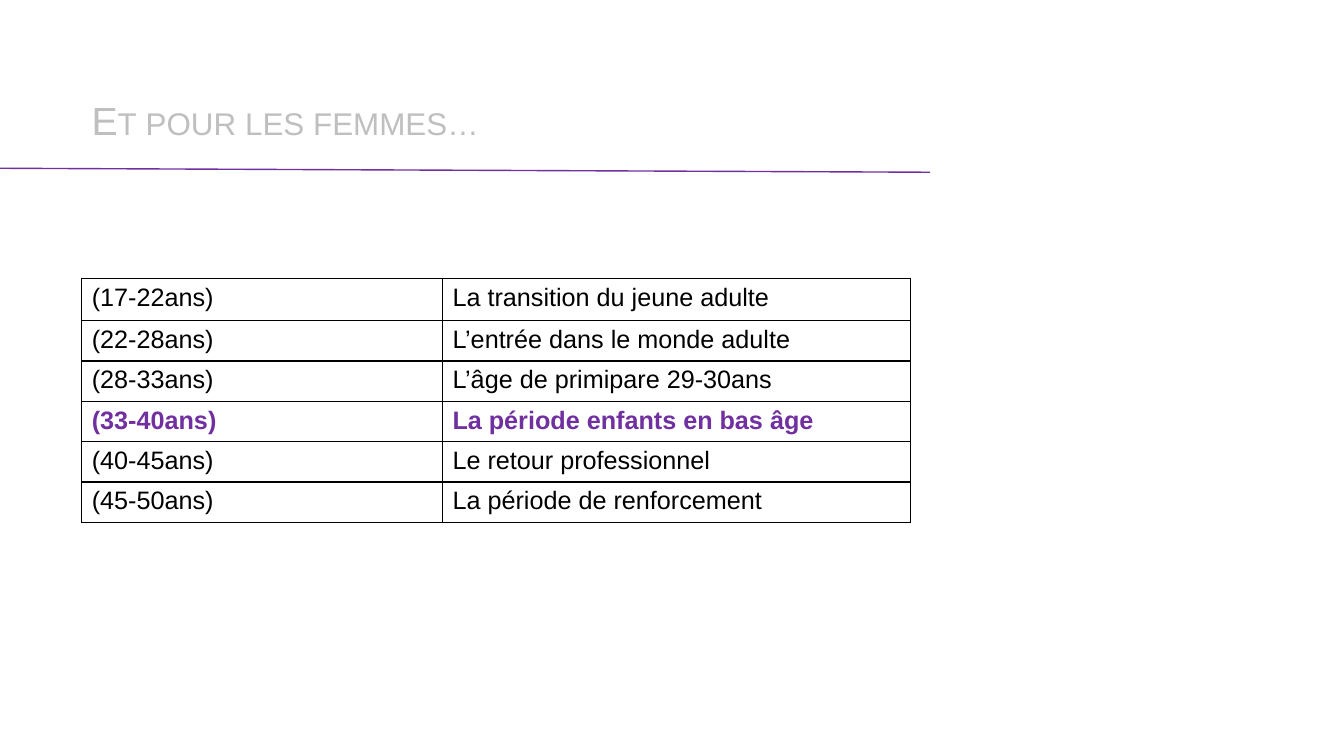
import pptx
import pptx.dml.color
import pptx.enum.shapes
import pptx.enum.text
import pptx.oxml.ns
import pptx.util
from lxml import etree
from pptx.util import Cm

TITLE = "Et pour les femmes…"
LIFE_PERIODS = [
    ("(17-22ans)", "La transition du jeune adulte"),
    ("(22-28ans)", "L’entrée dans le monde adulte"),
    ("(28-33ans)", "L’âge de primipare 29-30ans"),
    ("(33-40ans)", "La période enfants en bas âge"),
    ("(40-45ans)", "Le retour professionnel"),
    ("(45-50ans)", "La période de renforcement"),
]
HIGHLIGHTED_AGES = "(33-40ans)"

COLORS = {"title": "BFBFBF", "accent": "7030A0", "text": "000000", "border": "000000"}
FONT = "Arial"
LEFT = 2.06
COLUMN_WIDTHS = [9.09, 11.79]
FIRST_ROW_HEIGHT, ROW_HEIGHT = 1.07, 1.01


def write(frame, text, size=18, color="text", bold=False, small_caps=False):
    run = frame.paragraphs[0].add_run()
    run.text = text
    run.font.name = FONT
    run.font.size = pptx.util.Pt(size)
    run.font.bold = bold
    run.font.color.rgb = pptx.dml.color.RGBColor.from_string(COLORS[color])
    if small_caps:
        run.font._element.set("cap", "small")


def add_borders(cell):
    """Draw a 1 pt line on all four sides of a table cell."""
    properties = cell._tc.get_or_add_tcPr()
    qn = pptx.oxml.ns.qn
    for position, side in enumerate(("lnL", "lnR", "lnT", "lnB")):
        border = etree.Element(qn(f"a:{side}"), w=str(pptx.util.Pt(1)))
        fill = etree.SubElement(border, qn("a:solidFill"))
        etree.SubElement(fill, qn("a:srgbClr"), val=COLORS["border"])
        properties.insert(position, border)


def add_rule(slide):
    rule = slide.shapes.add_connector(
        pptx.enum.shapes.MSO_CONNECTOR.STRAIGHT, Cm(0), Cm(4.24), Cm(23.44), Cm(4.34))
    rule.line.width = pptx.util.Pt(1)
    rule.line.color.rgb = pptx.dml.color.RGBColor.from_string(COLORS["accent"])
    etree.SubElement(rule._element.spPr, pptx.oxml.ns.qn("a:effectLst"))


def add_title(slide):
    title = slide.shapes.add_textbox(Cm(LEFT), Cm(0.97), Cm(14.99), Cm(2.77))
    title.text_frame.word_wrap = True
    title.text_frame.vertical_anchor = pptx.enum.text.MSO_ANCHOR.BOTTOM
    write(title.text_frame, TITLE, size=28, color="title", small_caps=True)


def add_periods(slide):
    row_heights = [FIRST_ROW_HEIGHT] + [ROW_HEIGHT] * (len(LIFE_PERIODS) - 1)
    periods = slide.shapes.add_table(
        len(LIFE_PERIODS), len(COLUMN_WIDTHS), Cm(LEFT), Cm(7.01),
        Cm(sum(COLUMN_WIDTHS)), Cm(sum(row_heights))).table
    periods.first_row = False
    periods.horz_banding = False
    for column, width in zip(periods.columns, COLUMN_WIDTHS):
        column.width = Cm(width)
    for row, height, period in zip(periods.rows, row_heights, LIFE_PERIODS):
        row.height = Cm(height)
        highlighted = period[0] == HIGHLIGHTED_AGES
        for cell, text in zip(row.cells, period):
            cell.fill.background()
            add_borders(cell)
            write(cell.text_frame, text, bold=highlighted,
                  color="accent" if highlighted else "text")


def main():
    presentation = pptx.Presentation()
    presentation.slide_width = Cm(33.87)
    presentation.slide_height = Cm(19.05)
    slide = presentation.slides.add_slide(presentation.slide_layouts[6])
    add_rule(slide)
    add_title(slide)
    add_periods(slide)
    presentation.save("out.pptx")


if __name__ == "__main__":
    main()
